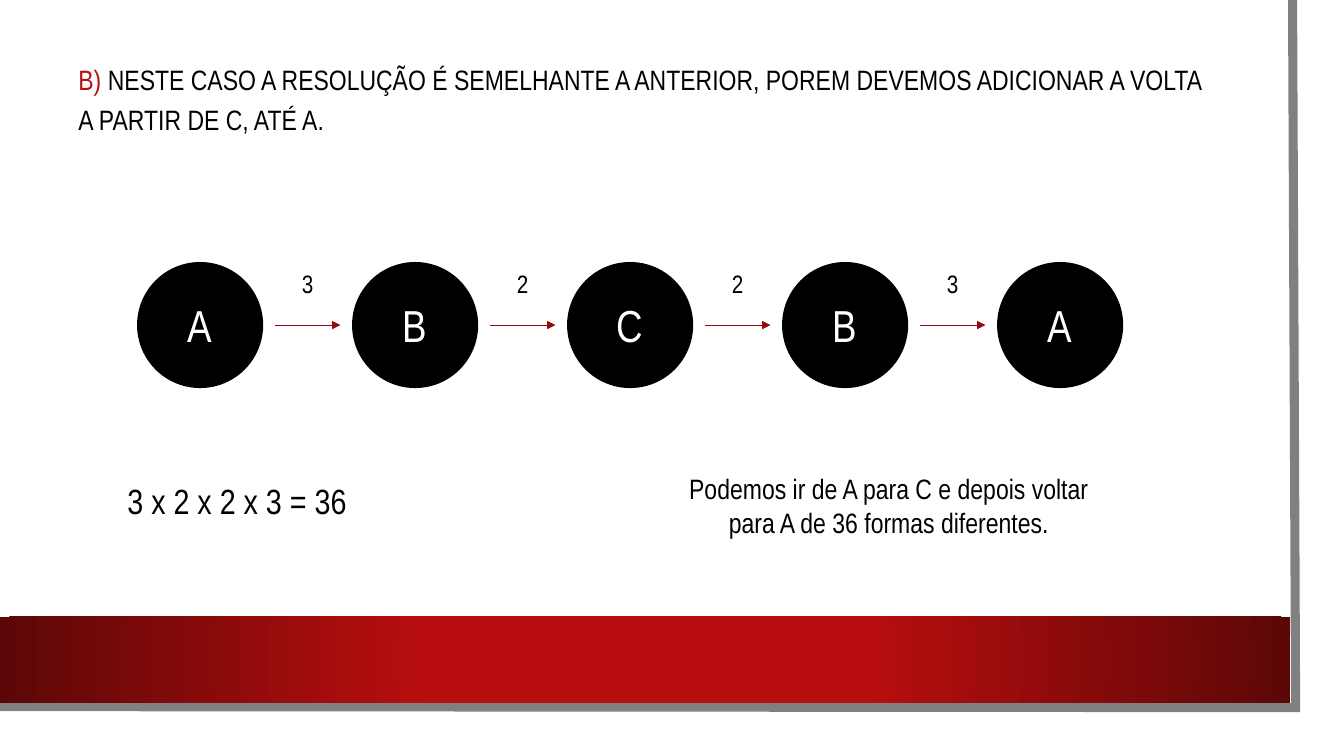
from lxml import etree
from pptx import Presentation
from pptx.dml.color import RGBColor
from pptx.enum.shapes import MSO_CONNECTOR, MSO_SHAPE
from pptx.enum.text import MSO_ANCHOR, PP_ALIGN
from pptx.oxml.ns import qn
from pptx.util import Inches, Pt

# Content
STATEMENT = [
    "B) ",
    "NESTE CASO A RESOLUÇÃO É SEMELHANTE A ANTERIOR, POREM DEVEMOS "
    "ADICIONAR A VOLTA A PARTIR DE C, ATÉ A.",
]
CITIES = ["A", "B", "C", "B", "A"]
ROUTES = ["3", "2", "2", "3"]
PRODUCT = "3 x 2 x 2 x 3 = 36"
ANSWER = "Podemos ir de A para C e depois voltar para A de 36 formas diferentes."

# Style
FONT = "Arial Narrow"
BLACK = RGBColor(0x00, 0x00, 0x00)
WHITE = RGBColor(0xFF, 0xFF, 0xFF)
GRAY = RGBColor(0x80, 0x80, 0x80)
RED = RGBColor(0xB8, 0x0E, 0x0F)
DARK_RED = RGBColor(0x5C, 0x07, 0x07)
ARROW_RED = RGBColor(0x93, 0x0B, 0x0C)
CENTER, LEFT = PP_ALIGN.CENTER, PP_ALIGN.LEFT
MIDDLE, TOP = MSO_ANCHOR.MIDDLE, MSO_ANCHOR.TOP
OVAL, RECTANGLE = MSO_SHAPE.OVAL, MSO_SHAPE.RECTANGLE
STRAIGHT = MSO_CONNECTOR.STRAIGHT

# Layout of the route, in inches
FIRST_X, LAST_X, CIRCLE_Y, DIAMETER = 1.37, 9.9, 2.61, 1.23
STEP = (LAST_X - FIRST_X) / (len(CITIES) - 1)
ARROW_LENGTH = 0.65
ARROW_OFFSET = DIAMETER + (STEP - DIAMETER - ARROW_LENGTH) / 2
ARROW_Y = CIRCLE_Y + DIAMETER / 2

prs = Presentation()
prs.slide_width, prs.slide_height = Inches(13.33), Inches(7.5)
slide = prs.slides.add_slide(prs.slide_layouts[6])
shapes = slide.shapes


def write(frame, texts, size, color, align=CENTER, anchor=TOP):
    frame.word_wrap = True
    frame.vertical_anchor = anchor
    paragraph = frame.paragraphs[0]
    paragraph.alignment = align
    paragraph.font.name = FONT
    paragraph.font.size = Pt(size)
    paragraph.font.color.rgb = color
    for text in texts:
        paragraph.add_run().text = text
    return paragraph


def add_text(box, texts, size, align=CENTER, anchor=TOP):
    frame = shapes.add_textbox(*map(Inches, box)).text_frame
    return write(frame, texts, size, BLACK, align, anchor)


# Gray edge of the page
builder = shapes.build_freeform(Inches(12.82), 0)
builder.add_line_segments(
    [(Inches(12.85), Inches(7.02)), (Inches(-0.03), Inches(7.01))], close=False)
edge = builder.convert_to_shape()
edge.shadow.inherit = False
edge.fill.background()
edge.line.color.rgb = GRAY
edge.line.width = Pt(6.5)
etree.SubElement(edge.line._get_or_add_ln(), qn("a:miter"), lim="800000")

# Red band with a circular gradient
band = shapes.add_shape(RECTANGLE, 0, Inches(6.12), Inches(12.8), Inches(0.85))
band.shadow.inherit = False
band.line.fill.background()
band.fill.gradient()
for stop, (position, color) in zip(band.fill.gradient_stops,
                                   [(0.34, RED), (1, DARK_RED)]):
    stop.position = position
    stop.color.rgb = color
gradient = band._element.spPr.find(qn("a:gradFill"))
gradient.remove(gradient.find(qn("a:lin")))
circle_path = etree.SubElement(gradient, qn("a:path"), path="circle")
etree.SubElement(circle_path, qn("a:fillToRect"),
                 l="50000", t="50000", r="50000", b="50000")

# Statement
statement = add_text((0.68, 0.41, 11.37, 1.08), STATEMENT, 20, LEFT, MIDDLE)
statement.line_spacing = 1.2
statement.runs[0].font.color.rgb = RED

# Cities
for i, city in enumerate(CITIES):
    circle = shapes.add_shape(OVAL, Inches(FIRST_X + i * STEP), Inches(CIRCLE_Y),
                              Inches(DIAMETER), Inches(DIAMETER))
    circle.shadow.inherit = False
    circle.fill.solid()
    circle.fill.fore_color.rgb = BLACK
    circle.line.color.rgb = BLACK
    circle.line.width = Pt(1.5)
    write(circle.text_frame, [city], 32, WHITE, anchor=MIDDLE)

# Arrows with the number of routes
for i, count in enumerate(ROUTES):
    x = FIRST_X + i * STEP + ARROW_OFFSET
    arrow = shapes.add_connector(STRAIGHT, Inches(x), Inches(ARROW_Y),
                                 Inches(x + ARROW_LENGTH), Inches(ARROW_Y))
    arrow.line.color.rgb = ARROW_RED
    arrow.line.width = Pt(0.75)
    etree.SubElement(arrow.line._get_or_add_ln(), qn("a:tailEnd"), type="triangle")
    etree.SubElement(arrow._element.spPr, qn("a:effectLst"))
    add_text((x, CIRCLE_Y, ARROW_LENGTH, 0.4), [count], 18)

# Result
add_text((1.06, 4.71, 2.58, 0.52), [PRODUCT], 25)
add_text((6.68, 4.63, 4.27, 1.11), [ANSWER], 20)

prs.save("out.pptx")
